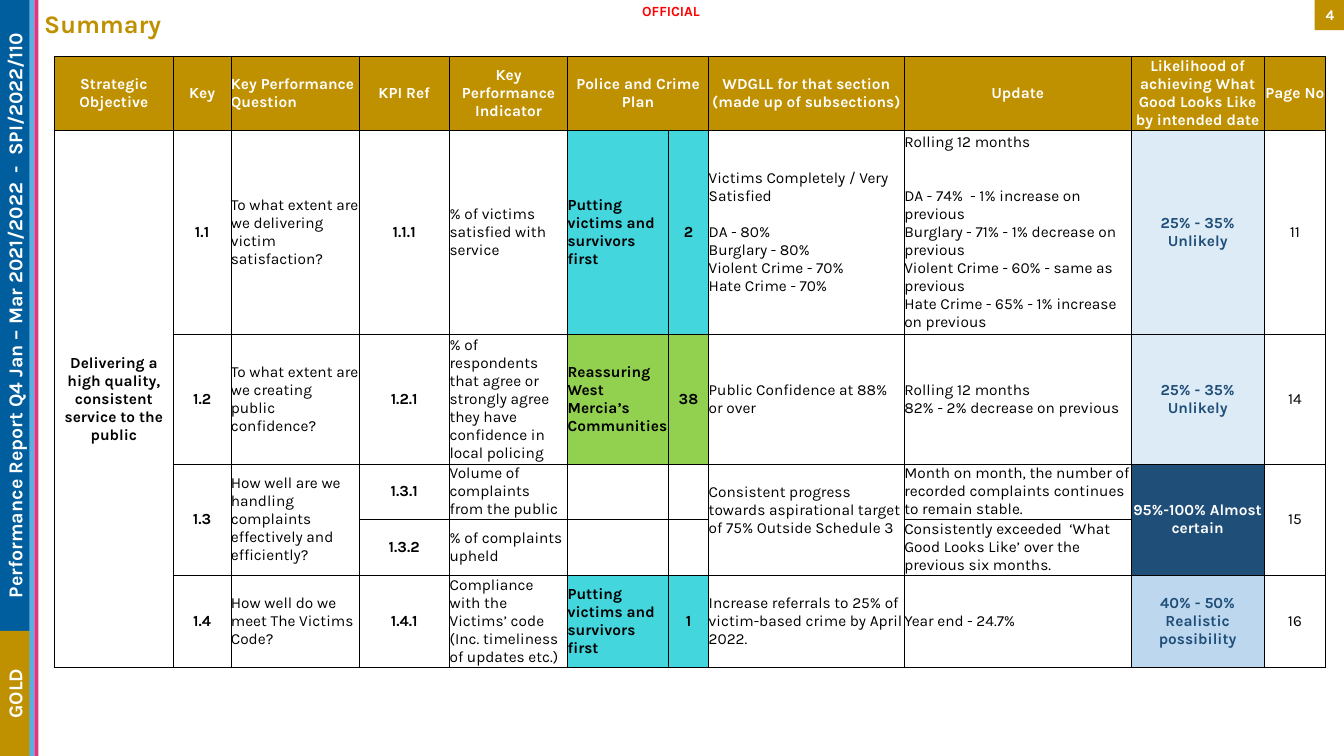
from pptx import Presentation
from pptx.util import Inches, Pt
from pptx.dml.color import RGBColor
from pptx.enum.shapes import MSO_SHAPE as Shape
from pptx.enum.text import PP_ALIGN as Align, MSO_ANCHOR as Anchor
from pptx.oxml import parse_xml
from pptx.oxml.ns import nsdecls

WIDTH, HEIGHT = 13.33, 7.5
FONT = "Karla"
GOLD, BLUE, SKY, PINK = "BF9000", "005E9E", "5EAEE0", "DC397F"
WHITE, BLACK, RED, NAVY = "FFFFFF", "000000", "FF0000", "1F4E78"
TURQUOISE, GREEN, PALE_BLUE, SOFT_BLUE = "43D6DD", "92D050", "DDEBF7", "BDD7EE"

REPORT = "Performance Report Q4 Jan – Mar 2021/2022  -  SPI/2022/110"
# left, top, width, height, colour, text
SIDEBAR = [
    (-0.01, 0, 0.31, 6.26, BLUE, REPORT),
    (-0.01, 6.26, 0.31, 1.24, GOLD, "GOLD"),
    (0.29, 0, 0.05, HEIGHT, SKY, ""),
    (0.34, 0, 0.04, HEIGHT, PINK, ""),
]

TABLE_LEFT, TABLE_TOP = 0.54, 0.56
COLUMNS = [1.18, 0.57, 1.27, 0.9, 1.17, 1, 0.4, 1.94, 2.25, 1.32, 0.61]
ROWS = [0.73, 2.02, 1.29, 0.55, 0.55, 0.92]
LINE = 12.86  # points from one table line to the next
CENTRED = {0, 1, 3, 6, 9, 10}
BOLD = {0, 1, 3, 5, 6, 9}

# A list in a cell holds blocks: (blank lines before, text)
CELLS = [
    ["Strategic Objective", "Key", "Key Performance Question", "KPI Ref",
     "Key Performance Indicator", "Police and Crime Plan", "",
     "WDGLL for that section (made up of subsections)", "Update",
     "Likelihood of achieving What Good Looks Like by intended date", "Page No"],
    ["Delivering a high quality, consistent service to the public", "1.1",
     "To what extent are we delivering victim satisfaction?", "1.1.1",
     "% of victims satisfied with service", "Putting victims and survivors first", "2",
     [(0, "Victims Completely / Very Satisfied"),
      (1, "DA - 80%\nBurglary - 80%\nViolent Crime - 70%\nHate Crime - 70%")],
     [(0, "Rolling 12 months"),
      (2, "DA - 74%  - 1% increase on previous\nBurglary - 71% - 1% decrease on previous\n"
          "Violent Crime - 60% - same as previous\nHate Crime - 65% - 1% increase on previous")],
     "25% - 35% Unlikely", "11"],
    ["", "1.2", "To what extent are we creating public confidence?", "1.2.1",
     "% of respondents that agree or strongly agree they have confidence in local policing",
     "Reassuring West Mercia’s Communities", "38", "Public Confidence at 88% or over",
     "Rolling 12 months\n82% - 2% decrease on previous", "25% - 35% Unlikely", "14"],
    ["", "1.3", "How well are we handling complaints effectively and efficiently?", "1.3.1",
     "Volume of complaints from the public", "", "",
     "Consistent progress towards aspirational target of 75% Outside Schedule 3",
     "Month on month, the number of recorded complaints continues to remain stable.",
     "95%-100% Almost certain", "15"],
    ["", "", "", "1.3.2", "% of complaints upheld", "", "", "",
     "Consistently exceeded  ‘What Good Looks Like’ over the previous six months.", "", ""],
    ["", "1.4", "How well do we meet The Victims Code?", "1.4.1",
     "Compliance with the Victims’ code\n(Inc. timeliness of updates etc.)",
     "Putting victims and survivors first", "1",
     "Increase referrals to 25% of victim-based crime by April 2022.",
     "Year end - 24.7%", "40% - 50% Realistic possibility", "16"],
]
FILLS = {(1, 5): TURQUOISE, (1, 6): TURQUOISE, (1, 9): PALE_BLUE,
         (2, 5): GREEN, (2, 6): GREEN, (2, 9): PALE_BLUE,
         (3, 9): NAVY, (5, 5): TURQUOISE, (5, 6): TURQUOISE, (5, 9): SOFT_BLUE}
MERGES = [((0, 5), (0, 6)), ((1, 0), (5, 0))] + [
    ((3, column), (4, column)) for column in (1, 2, 7, 9, 10)]


def rgb(colour):
    return RGBColor.from_string(colour)


def write(frame, content, size=11, colour=BLACK, bold=True, align=Align.CENTER):
    """Write a string, or blocks of (blank lines before, text), into a frame."""
    blocks = content if isinstance(content, list) else [(0, content)]
    for index, (gap, text) in enumerate(blocks):
        paragraph = frame.add_paragraph() if index else frame.paragraphs[0]
        paragraph.text = text
        paragraph.alignment = align
        if gap:
            paragraph.space_before = Pt(gap * LINE)
        font = paragraph.font
        font.name, font.size, font.bold = FONT, Pt(size), bold
        font.color.rgb = rgb(colour)
        for run in paragraph.runs:
            run.font.name, run.font.size, run.font.bold = FONT, Pt(size), bold
            run.font.color.rgb = rgb(colour)


def add_block(slide, left, top, width, height, colour):
    shape = slide.shapes.add_shape(Shape.RECTANGLE, *map(Inches, (left, top, width, height)))
    shape.shadow.inherit = False
    shape.fill.solid()
    shape.fill.fore_color.rgb = rgb(colour)
    shape.line.fill.background()
    frame = shape.text_frame
    frame.margin_left = frame.margin_right = frame.margin_top = frame.margin_bottom = 0
    frame.vertical_anchor = Anchor.MIDDLE
    return shape


def add_label(slide, left, top, width, height, text, margin_top=0.05, **style):
    frame = slide.shapes.add_textbox(*map(Inches, (left, top, width, height))).text_frame
    frame.word_wrap = True
    frame.margin_top = Inches(margin_top)
    write(frame, text, **style)


def add_borders(cell):
    properties = cell._tc.get_or_add_tcPr()
    for index, side in enumerate("LRTB"):
        properties.insert(index, parse_xml(
            f'<a:ln{side} {nsdecls("a")} w="6350"><a:solidFill><a:srgbClr val="{BLACK}"/>'
            f'</a:solidFill></a:ln{side}>'))


def cell_colour(row, column):
    if row == 0 or FILLS.get((row, column)) == NAVY:
        return WHITE
    return NAVY if column == 9 else BLACK


def add_summary_table(slide):
    table = slide.shapes.add_table(
        len(ROWS), len(COLUMNS), Inches(TABLE_LEFT), Inches(TABLE_TOP),
        Inches(sum(COLUMNS)), Inches(sum(ROWS))).table
    table.first_row = table.horz_banding = False
    for column, width in zip(table.columns, COLUMNS):
        column.width = Inches(width)
    for row, height in zip(table.rows, ROWS):
        row.height = Inches(height)
    for row, contents in enumerate(CELLS):
        for column, content in enumerate(contents):
            cell = table.cell(row, column)
            cell.margin_left = cell.margin_right = cell.margin_top = cell.margin_bottom = 0
            cell.vertical_anchor = Anchor.MIDDLE
            fill = GOLD if row == 0 else FILLS.get((row, column))
            if fill:
                cell.fill.solid()
                cell.fill.fore_color.rgb = rgb(fill)
            else:
                cell.fill.background()
            add_borders(cell)
            centred = column in CENTRED or (row == 0 and column != 2)
            write(cell.text_frame, content, colour=cell_colour(row, column),
                  bold=row == 0 or column in BOLD,
                  align=Align.CENTER if centred else Align.LEFT)
    table.cell(3, 7).margin_bottom = Pt(LINE)
    for first, last in MERGES:
        table.cell(*first).merge(table.cell(*last))


def main():
    presentation = Presentation()
    presentation.slide_width, presentation.slide_height = Inches(WIDTH), Inches(HEIGHT)
    slide = presentation.slides.add_slide(presentation.slide_layouts[6])
    slide.background.fill.solid()
    slide.background.fill.fore_color.rgb = rgb(WHITE)

    add_label(slide, 5.88, -0.02, 1.55, 0.27, "OFFICIAL", size=10, colour=RED)
    for *place, colour, text in SIDEBAR:
        frame = add_block(slide, *place, colour).text_frame
        if text:
            frame._txBody.bodyPr.set("vert", "vert270")
            write(frame, text, size=14, colour=WHITE)
    add_label(slide, 0.34, -0.1, 11.25, 0.81, "Summary", margin_top=0.18,
              size=18, colour=GOLD, align=Align.JUSTIFY)
    page_number = add_block(slide, 13.04, 0, 0.3, 0.3, GOLD)
    write(page_number.text_frame, "4", size=10.5, colour=WHITE)
    add_summary_table(slide)
    presentation.save("out.pptx")


if __name__ == "__main__":
    main()
